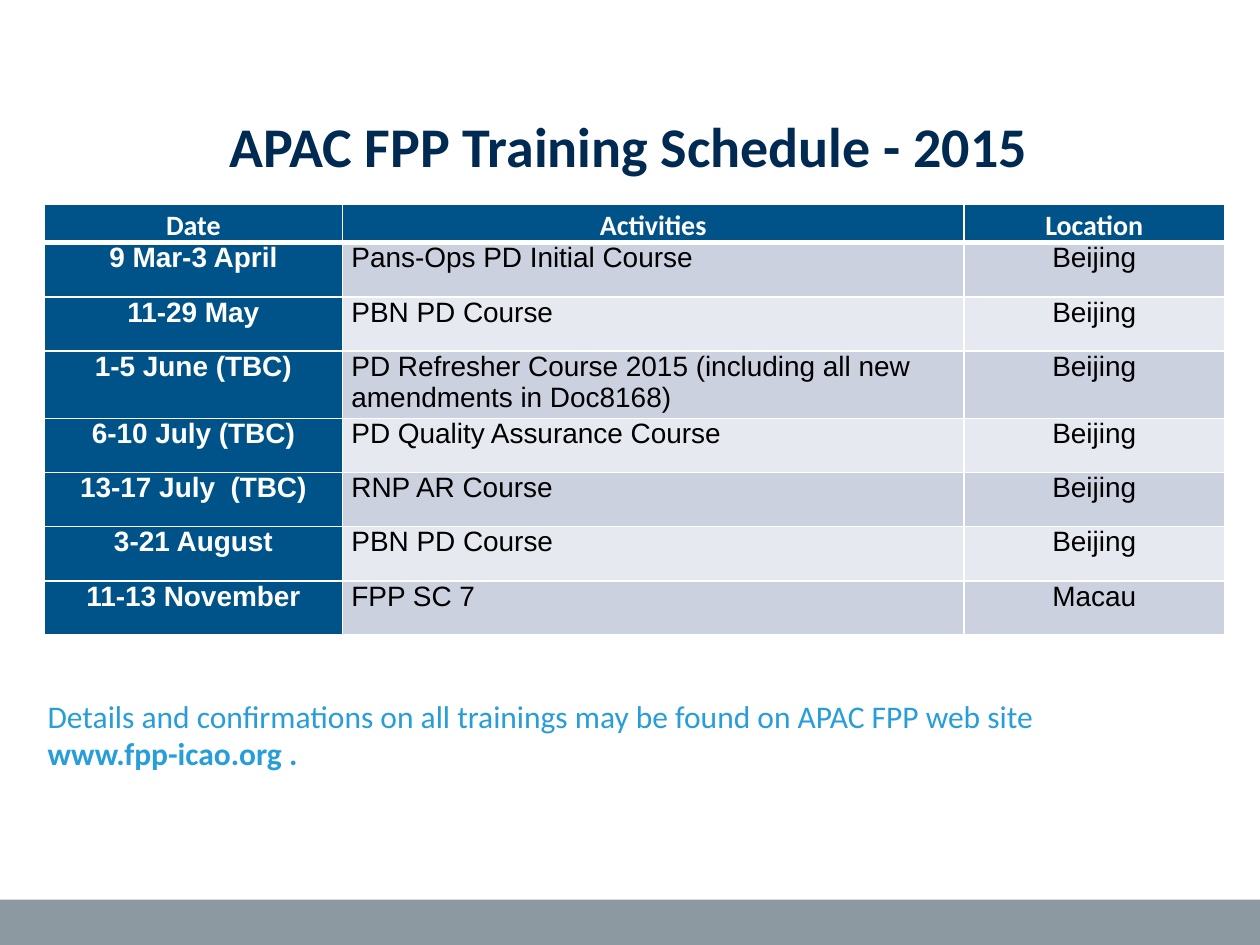
from lxml.etree import SubElement
from pptx import Presentation
from pptx.dml.color import RGBColor
from pptx.enum.shapes import MSO_SHAPE
from pptx.enum.text import MSO_ANCHOR, PP_ALIGN
from pptx.oxml.ns import qn
from pptx.util import Inches, Pt

WHITE = RGBColor(0xFF, 0xFF, 0xFF)
BLACK = RGBColor(0x00, 0x00, 0x00)
NAVY = RGBColor(0x00, 0x2A, 0x52)
BLUE = RGBColor(0x00, 0x53, 0x89)
SKY = RGBColor(0x27, 0x9D, 0xD9)
GRAY = RGBColor(0x8C, 0x99, 0xA1)
BANDS = [RGBColor(0xCC, 0xD1, 0xE0), RGBColor(0xE7, 0xE9, 0xF0)]

HEADER = ("Date", "Activities", "Location")
COURSES = [
    ("9 Mar-3 April", "Pans-Ops PD Initial Course", "Beijing"),
    ("11-29 May", "PBN PD Course", "Beijing"),
    ("1-5 June (TBC)",
     "PD Refresher Course 2015 (including all new amendments in Doc8168)",
     "Beijing"),
    ("6-10 July (TBC)", "PD Quality Assurance Course", "Beijing"),
    ("13-17 July  (TBC)", "RNP AR Course", "Beijing"),
    ("3-21 August", "PBN PD Course", "Beijing"),
    ("11-13 November", "FPP SC 7", "Macau"),
]
COLUMN_WIDTHS = (2.37, 4.93, 2.07)
HEADER_HEIGHT, ROW_HEIGHT = 0.29, 0.43


def add_run(paragraph, text, size, color, bold=False, font="Calibri"):
    run = paragraph.add_run()
    run.text = text
    run.font.name = font
    run.font.size = Pt(size)
    run.font.bold = bold
    run.font.color.rgb = color


def add_text_box(slide, box):
    frame = slide.shapes.add_textbox(*map(Inches, box)).text_frame
    frame.word_wrap = True
    return frame


def set_borders(cell, bottom_width):
    properties = cell._tc.get_or_add_tcPr()
    for side, width in (("L", 1), ("R", 1), ("T", 1), ("B", bottom_width)):
        line = SubElement(properties, qn(f"a:ln{side}"), w=str(Pt(width)))
        fill = SubElement(line, qn("a:solidFill"))
        SubElement(fill, qn("a:srgbClr"), val=str(WHITE))


def add_footer_band(slide, box):
    band = slide.shapes.add_shape(MSO_SHAPE.RECTANGLE, *map(Inches, box))
    band.shadow.inherit = False
    band.fill.solid()
    band.fill.fore_color.rgb = GRAY
    band.line.fill.background()


def add_title(slide, box):
    frame = add_text_box(slide, box)
    frame.vertical_anchor = MSO_ANCHOR.MIDDLE
    paragraph = frame.paragraphs[0]
    paragraph.alignment = PP_ALIGN.CENTER
    add_run(paragraph, "APAC FPP Training Schedule - 2015", 32, NAVY, True)


def fill_cell(cell, text, row, column):
    is_header = row == 0
    is_label = is_header or column == 0
    cell.margin_left = cell.margin_right = Inches(0.07)
    cell.margin_top = cell.margin_bottom = 0
    set_borders(cell, 3 if is_header else 1)
    cell.fill.solid()
    cell.fill.fore_color.rgb = BLUE if is_label else BANDS[(row - 1) % 2]
    paragraph = cell.text_frame.paragraphs[0]
    centered = is_header or column != 1
    paragraph.alignment = PP_ALIGN.CENTER if centered else PP_ALIGN.LEFT
    if is_header:
        paragraph.line_spacing = 1.15
    add_run(paragraph, text, 16, WHITE if is_label else BLACK, is_label,
            "Calibri" if is_header else "Arial")


def add_schedule(slide, left, top):
    rows = [HEADER, *COURSES]
    height = HEADER_HEIGHT + ROW_HEIGHT * len(COURSES)
    table = slide.shapes.add_table(
        len(rows), len(HEADER), Inches(left), Inches(top),
        Inches(sum(COLUMN_WIDTHS)), Inches(height)).table
    for column, width in zip(table.columns, COLUMN_WIDTHS):
        column.width = Inches(width)
    for row, texts in enumerate(rows):
        table.rows[row].height = Inches(ROW_HEIGHT if row else HEADER_HEIGHT)
        for column, text in enumerate(texts):
            fill_cell(table.cell(row, column), text, row, column)


def add_note(slide, box):
    paragraph = add_text_box(slide, box).paragraphs[0]
    add_run(paragraph, "Details and confirmations on all trainings may be "
            "found on APAC FPP web site ", 18, SKY)
    paragraph.add_line_break()
    add_run(paragraph, "www.fpp-icao.org .", 18, SKY, True)


def main():
    presentation = Presentation()
    presentation.slide_width = Inches(10)
    presentation.slide_height = Inches(7.5)
    slide = presentation.slides.add_slide(presentation.slide_layouts[6])
    add_footer_band(slide, (0, 7.14, 10, 0.36))
    add_title(slide, (0.49, 0.53, 9, 1.25))
    add_schedule(slide, 0.35, 1.62)
    add_note(slide, (0.28, 5.48, 9.53, 0.71))
    presentation.save("out.pptx")


if __name__ == "__main__":
    main()
